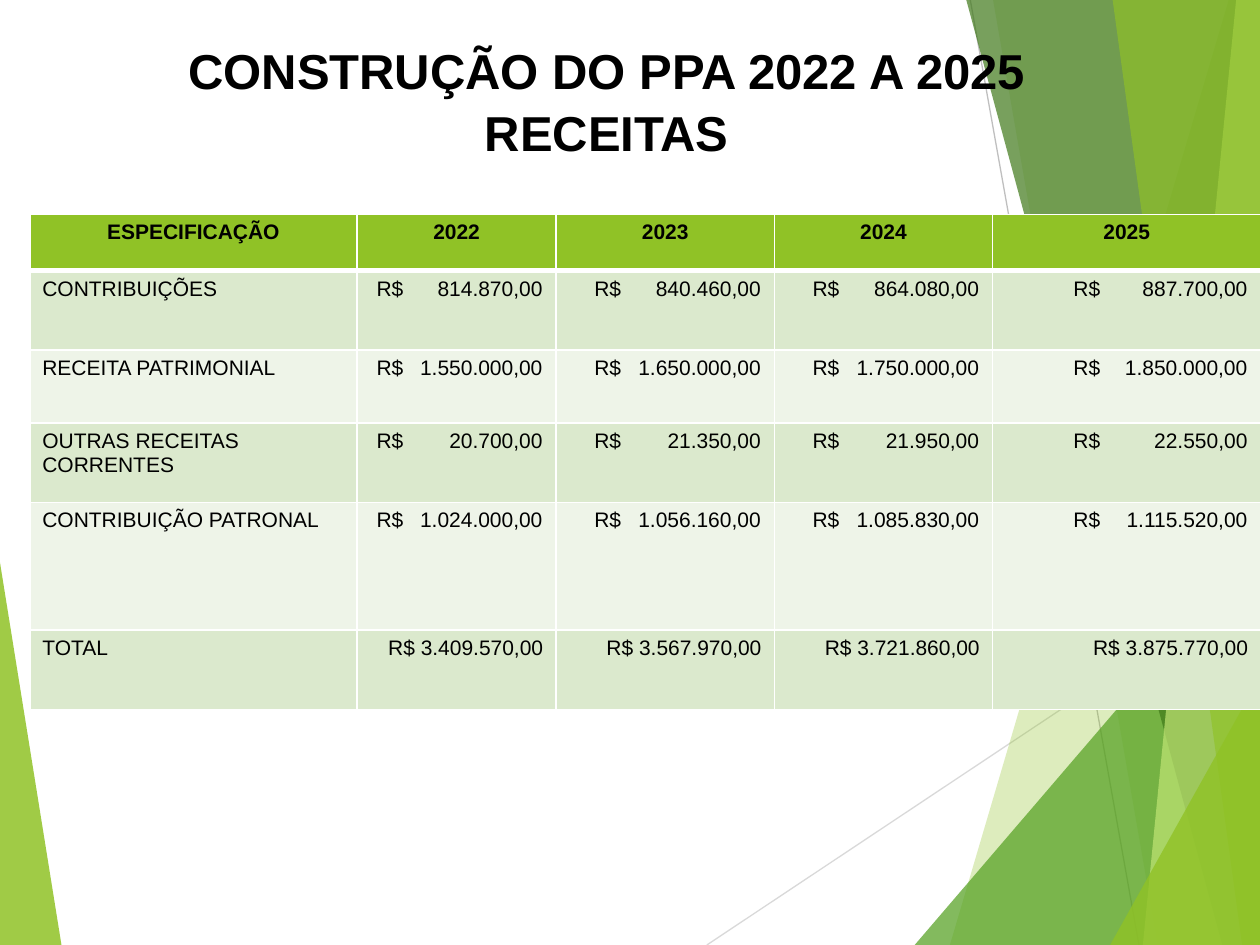
from lxml import etree
from pptx import Presentation
from pptx import util as u
from pptx.dml.color import RGBColor
from pptx.enum import shapes, text
from pptx.oxml.ns import qn

BLACK = RGBColor(0x00, 0x00, 0x00)
WHITE = RGBColor(0xFF, 0xFF, 0xFF)
LIME = RGBColor(0x90, 0xC2, 0x26)
GREEN = RGBColor(0x54, 0xA0, 0x21)
FOREST = RGBColor(0x3F, 0x78, 0x19)
PALE_LIME = RGBColor(0xC0, 0xE4, 0x74)
BAND_DARK = RGBColor(0xDB, 0xE9, 0xCD)
BAND_LIGHT = RGBColor(0xEE, 0xF4, 0xE8)
LIGHT_GRAY = RGBColor(0xD9, 0xD9, 0xD9)
GRAY = RGBColor(0xBF, 0xBF, 0xBF)

WIDTH, HEIGHT, EDGE = 25.4, 19.05, 25.43
CELL_MARGIN = 0.25

LEFT_WEDGE = ([(-0.03, 11.15), (1.24, HEIGHT), (-0.03, HEIGHT)], LIME, 85)
RAYS = [((5.61 * 2.54, HEIGHT), (EDGE, 11.61), LIGHT_GRAY),
        ((19.56, 0), (22.96, HEIGHT), GRAY)]


def band(top_x, bottom_x):
    return [(top_x, 0), (bottom_x, HEIGHT), (EDGE, HEIGHT), (EDGE, 0)]


def corner(bottom_x, top_y):
    return [(bottom_x, HEIGHT), (EDGE, top_y), (EDGE, HEIGHT)]


RIGHT_FACETS = [
    (band(24.77, 19.15), LIME, 30),
    (band(20.02, 23.34), LIME, 20),
    (corner(18.44, 10.9), GREEN, 72),
    (band(19.48, 24.64), FOREST, 70),
    (band(24.92, 23.04), PALE_LIME, 70),
    (band(22.43, 25.04), LIME, 65),
    (corner(22.38, 13.59), LIME, 80),
]

COLUMN_WIDTHS = [6.6, 4.01, 4.4, 4.4, 5.41]
ROW_HEIGHTS = [1.14, 1.6, 1.47, 1.6, 2.57, 1.6]
CURRENCY_INDENTS = [0.39, 0.77, 0.77, 1.63]
HEADER = ["ESPECIFICAÇÃO", "2022", "2023", "2024", "2025"]
REVENUES = [
    ["CONTRIBUIÇÕES", "814.870,00", "840.460,00", "864.080,00", "887.700,00"],
    ["RECEITA PATRIMONIAL", "1.550.000,00", "1.650.000,00", "1.750.000,00", "1.850.000,00"],
    ["OUTRAS RECEITAS CORRENTES", "20.700,00", "21.350,00", "21.950,00", "22.550,00"],
    ["CONTRIBUIÇÃO PATRONAL", "1.024.000,00", "1.056.160,00", "1.085.830,00", "1.115.520,00"],
    ["TOTAL", "3.409.570,00", "3.567.970,00", "3.721.860,00", "3.875.770,00"],
]


def write(para, words, size=12, bold=False, align=text.PP_ALIGN.LEFT, spacing=None):
    para.alignment = align
    if spacing:
        para.line_spacing = spacing
    span = para.add_run()
    span.text = words
    span.font.name = "Arial"
    span.font.size = u.Pt(size)
    span.font.bold = bold
    span.font.color.rgb = BLACK


def add_facet(page, points, color, opacity):
    corners = [(u.Cm(x), u.Cm(y)) for x, y in points]
    builder = page.shapes.build_freeform(*corners[0])
    builder.add_line_segments(corners[1:], close=True)
    facet = builder.convert_to_shape()
    facet.shadow.inherit = False
    facet.line.fill.background()
    facet.fill.solid()
    facet.fill.fore_color.rgb = color
    tint = facet.fill._xPr.find(".//" + qn("a:srgbClr"))
    etree.SubElement(tint, qn("a:alpha"), val=str(opacity * 1000))


def add_ray(page, start, end, color):
    ray = page.shapes.add_connector(
        shapes.MSO_CONNECTOR.STRAIGHT, *[u.Cm(value) for value in start + end])
    ray.line.color.rgb = color
    ray.line.width = u.Pt(0.75)
    etree.SubElement(ray._element.spPr, qn("a:effectLst"))


def style_cell(cell, color, bottom=1, top=1):
    properties = cell._tc.get_or_add_tcPr()
    for side, points in (("L", 1), ("R", 1), ("T", top), ("B", bottom)):
        border = etree.SubElement(properties, qn("a:ln" + side), w=str(u.Pt(points)))
        fill = etree.SubElement(border, qn("a:solidFill"))
        etree.SubElement(fill, qn("a:srgbClr"), val=str(WHITE))
    cell.fill.solid()
    cell.fill.fore_color.rgb = color


def write_amount(cell, amount, width, indent):
    cell.margin_left = u.Cm(indent)
    para = cell.text_frame.paragraphs[0]
    write(para, "R$\t" + amount)
    stops = etree.SubElement(para._p.get_or_add_pPr(), qn("a:tabLst"))
    position = u.Cm(width - indent - CELL_MARGIN - 0.02)
    etree.SubElement(stops, qn("a:tab"), pos=str(position), algn="r")


def add_revenue_table(page):
    frame = page.shapes.add_table(
        len(ROW_HEIGHTS), len(COLUMN_WIDTHS), u.Cm(0.6), u.Cm(4.32),
        u.Cm(sum(COLUMN_WIDTHS)), u.Cm(sum(ROW_HEIGHTS)))
    table = frame.table
    for column, width in zip(table.columns, COLUMN_WIDTHS):
        column.width = u.Cm(width)
    for row, height in zip(table.rows, ROW_HEIGHTS):
        row.height = u.Cm(height)
    for index, label in enumerate(HEADER):
        cell = table.cell(0, index)
        style_cell(cell, LIME, bottom=3)
        write(cell.text_frame.paragraphs[0], label, bold=True, align=text.PP_ALIGN.CENTER)
    for row, (label, *amounts) in enumerate(REVENUES, 1):
        color = BAND_DARK if row % 2 else BAND_LIGHT
        for column in range(len(COLUMN_WIDTHS)):
            style_cell(table.cell(row, column), color, top=3 if row == 1 else 1)
        write(table.cell(row, 0).text_frame.paragraphs[0], label)
        for column, amount in enumerate(amounts, 1):
            cell = table.cell(row, column)
            if label == "TOTAL":
                write(cell.text_frame.paragraphs[0], "R$ " + amount, align=text.PP_ALIGN.RIGHT)
            else:
                write_amount(cell, amount, COLUMN_WIDTHS[column], CURRENCY_INDENTS[column - 1])


def add_title(page, lines):
    box = page.shapes.add_textbox(u.Cm(1.5), u.Cm(0), u.Cm(21.46), u.Cm(4))
    frame = box.text_frame
    frame.word_wrap = True
    frame.vertical_anchor = text.MSO_ANCHOR.MIDDLE
    for index, line in enumerate(lines):
        para = frame.add_paragraph() if index else frame.paragraphs[0]
        write(para, line, size=28, bold=True, align=text.PP_ALIGN.CENTER, spacing=1.05)


def main():
    deck = Presentation()
    deck.slide_width, deck.slide_height = u.Cm(WIDTH), u.Cm(HEIGHT)
    page = deck.slides.add_slide(deck.slide_layouts[6])
    add_facet(page, *LEFT_WEDGE)
    for ray in RAYS:
        add_ray(page, *ray)
    for facet in RIGHT_FACETS:
        add_facet(page, *facet)
    add_revenue_table(page)
    add_title(page, ["CONSTRUÇÃO DO PPA 2022 A 2025", "RECEITAS"])
    deck.save("out.pptx")


if __name__ == "__main__":
    main()
